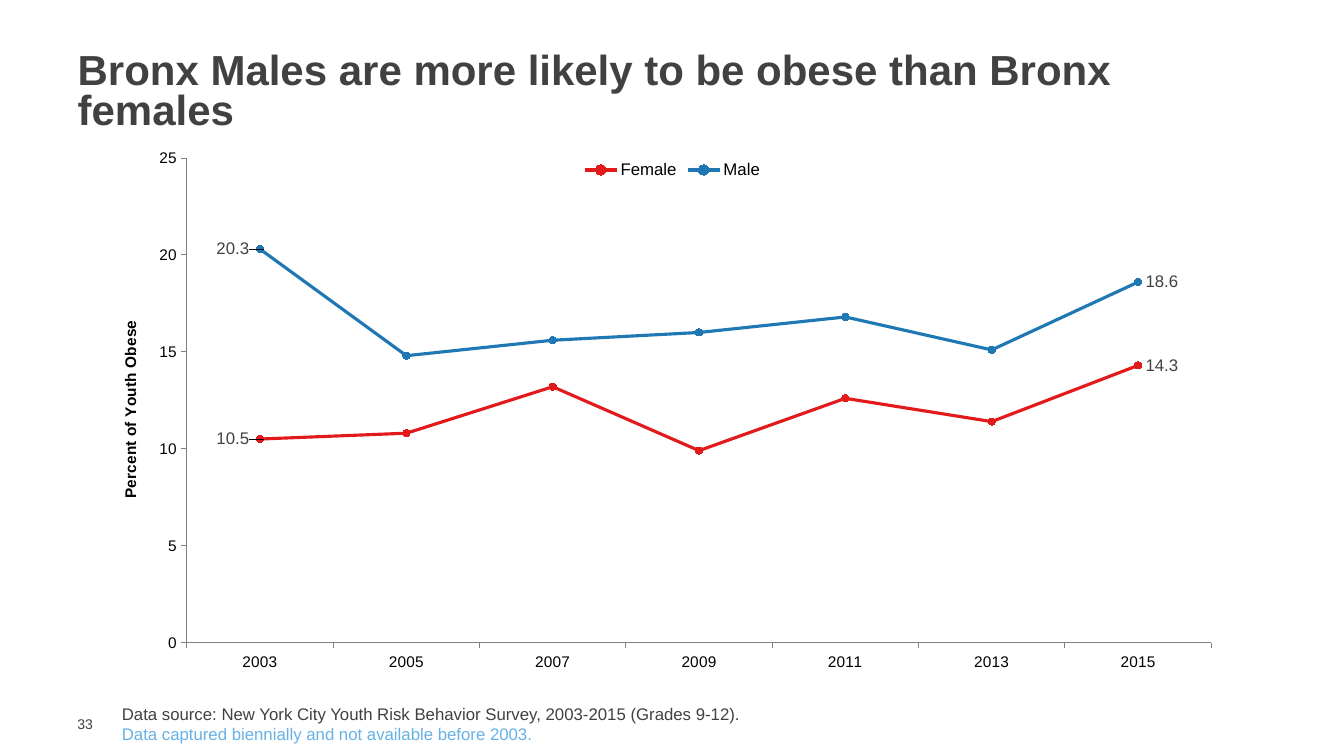
from lxml import etree
from pptx import Presentation
from pptx.chart.data import CategoryChartData
from pptx.dml.color import RGBColor
from pptx.enum.chart import XL_CHART_TYPE as ChartType, XL_LABEL_POSITION as LabelPosition
from pptx.enum.chart import XL_LEGEND_POSITION as LegendPosition, XL_MARKER_STYLE as MarkerStyle
from pptx.enum.chart import XL_TICK_MARK as TickMark
from pptx.enum.text import MSO_ANCHOR as Anchor, MSO_AUTO_SIZE as AutoSize, PP_ALIGN as Align
from pptx.oxml import parse_xml
from pptx.oxml.ns import nsdecls
from pptx.util import Emu, Pt

SCALE = 9144  # EMU in one px, 100 px to the inch
COLORS = {"text": "414042", "black": "000000", "axis": "808080", "note": "66B2E5",
          "Female": "E31A1C", "Male": "1F78B4"}
YEARS = [str(year) for year in range(2003, 2016, 2)]
OBESITY = {"Female": [10.5, 10.8, 13.2, 9.9, 12.6, 11.4, 14.3],
           "Male": [20.3, 14.8, 15.6, 16, 16.8, 15.1, 18.6]}


def px(value):
    return Emu(value * SCALE)


def color(name):
    return RGBColor.from_string(COLORS[name])


def manual_layout(parts):
    """Chart layout from (tag, value) pairs."""
    body = "".join(f'<c:{tag} val="{value}"/>' for tag, value in parts)
    return parse_xml(f'<c:layout {nsdecls("c")}><c:manualLayout>{body}'
                     '</c:manualLayout></c:layout>')


class SlideBuilder:
    font_name = "Arial"

    def __init__(self, deck):
        self.page = deck.slides.add_slide(deck.slide_layouts[5])

    def style(self, font, size, shade="text", bold=False):
        font.name, font.size, font.bold = self.font_name, Pt(size), bold
        font.color.rgb = color(shade)

    def title(self, text, left, top, width, height):
        box = self.page.shapes.title
        box.left, box.top, box.width, box.height = map(px, (left, top, width, height))
        frame = box.text_frame
        frame.text = text
        frame.auto_size, frame.vertical_anchor = AutoSize.NONE, Anchor.MIDDLE
        para = frame.paragraphs[0]
        para.alignment, para.line_spacing = Align.LEFT, 0.8
        self.style(para.runs[0].font, 30, bold=True)

    def text(self, lines, left, top, width, height, size, anchor=Anchor.TOP, inset=5):
        box = self.page.shapes.add_textbox(*map(px, (left, top, width, height)))
        frame = box.text_frame
        frame.word_wrap, frame.vertical_anchor = True, anchor
        frame.margin_top = frame.margin_bottom = px(inset)
        frame.text = "\n".join(line for line, shade in lines)
        for para, (line, shade) in zip(frame.paragraphs, lines):
            self.style(para.runs[0].font, size, shade)

    def line_chart(self, categories, values, axis_title, left, top, width, height):
        data = CategoryChartData()
        data.categories = categories
        for name, numbers in values.items():
            data.add_series(name, numbers)
        chart = self.page.shapes.add_chart(
            ChartType.LINE_MARKERS, *map(px, (left, top, width, height)), data).chart
        chart.has_title = False
        self.style(chart.font, 10)

        # Legend
        chart.has_legend = True
        chart.legend.position = LegendPosition.TOP
        chart.legend.include_in_layout = False
        self.style(chart.legend.font, 12, "black")

        # Axes
        for axis in (chart.category_axis, chart.value_axis):
            axis.has_major_gridlines = False
            axis.major_tick_mark, axis.minor_tick_mark = TickMark.OUTSIDE, TickMark.NONE
            axis.format.line.color.rgb = color("axis")
            axis.format.line.width = Pt(0.75)
            self.style(axis.tick_labels.font, 11, "black")
        axis = chart.value_axis
        axis.minimum_scale, axis.maximum_scale, axis.major_unit = 0, 25, 5
        frame = axis.axis_title.text_frame
        frame.text = axis_title
        self.style(frame.paragraphs[0].runs[0].font, 11, "black", bold=True)

        # Plot area
        area = chart._chartSpace.chart.plotArea
        for old in area.xpath("c:layout"):
            area.remove(old)
        area.insert(0, manual_layout([
            ("layoutTarget", "inner"), ("xMode", "edge"), ("yMode", "edge"),
            ("x", 0.063), ("y", 0.016), ("w", 0.922), ("h", 0.931)]))
        for series in chart.plots[0].series:
            self.series(series, len(categories) - 1)

    def series(self, series, last):
        shade = color(series.name)
        series.smooth = False
        series.format.line.color.rgb = shade
        series.format.line.width = Pt(2.25)
        marker = series.marker
        marker.style, marker.size = MarkerStyle.CIRCLE, 5
        marker.format.fill.solid()
        marker.format.fill.fore_color.rgb = shade
        marker.format.line.color.rgb = shade

        # First and last values; the first is moved left on a leader line
        labels = series.data_labels
        labels.show_value = False
        for index in (0, last):
            label = series.points[index].data_label
            self.style(label.font, 12)
            label.position = LabelPosition.RIGHT
        first = series._element.xpath("c:dLbls/c:dLbl")[0]
        first.insert(1, manual_layout([("x", -0.046), ("y", -0.001)]))
        leader = parse_xml(
            f'<c:extLst {nsdecls("c")}><c:ext uri="{{CE6537A1-D6FC-4f65-9D91-7224C49458BB}}"/>'
            '</c:extLst>')
        c15 = "http://schemas.microsoft.com/office/drawing/2012/chart"
        etree.SubElement(leader[0], f"{{{c15}}}showLeaderLines", {"val": "1"}, {"c15": c15})
        labels._element.append(leader)


def main():
    deck = Presentation()
    deck.slide_width, deck.slide_height = px(1333), px(750)
    builder = SlideBuilder(deck)
    builder.title("Bronx Males are more likely to be obese than Bronx females", 67, 47, 1200, 91)
    builder.line_chart(YEARS, OBESITY, "Percent of Youth Obese", 116, 148, 1102, 517)

    # Source and slide number
    builder.text([
        ("Data source: New York City Youth Risk Behavior Survey, 2003-2015 (Grades 9-12).", "text"),
        ("Data captured biennially and not available before 2003.", "note"),
    ], 111, 693, 971, 50, 12)
    builder.text([("33", "text")], 67, 710, 43, 17, 10, Anchor.MIDDLE, 0)
    deck.save("out.pptx")


if __name__ == "__main__":
    main()
